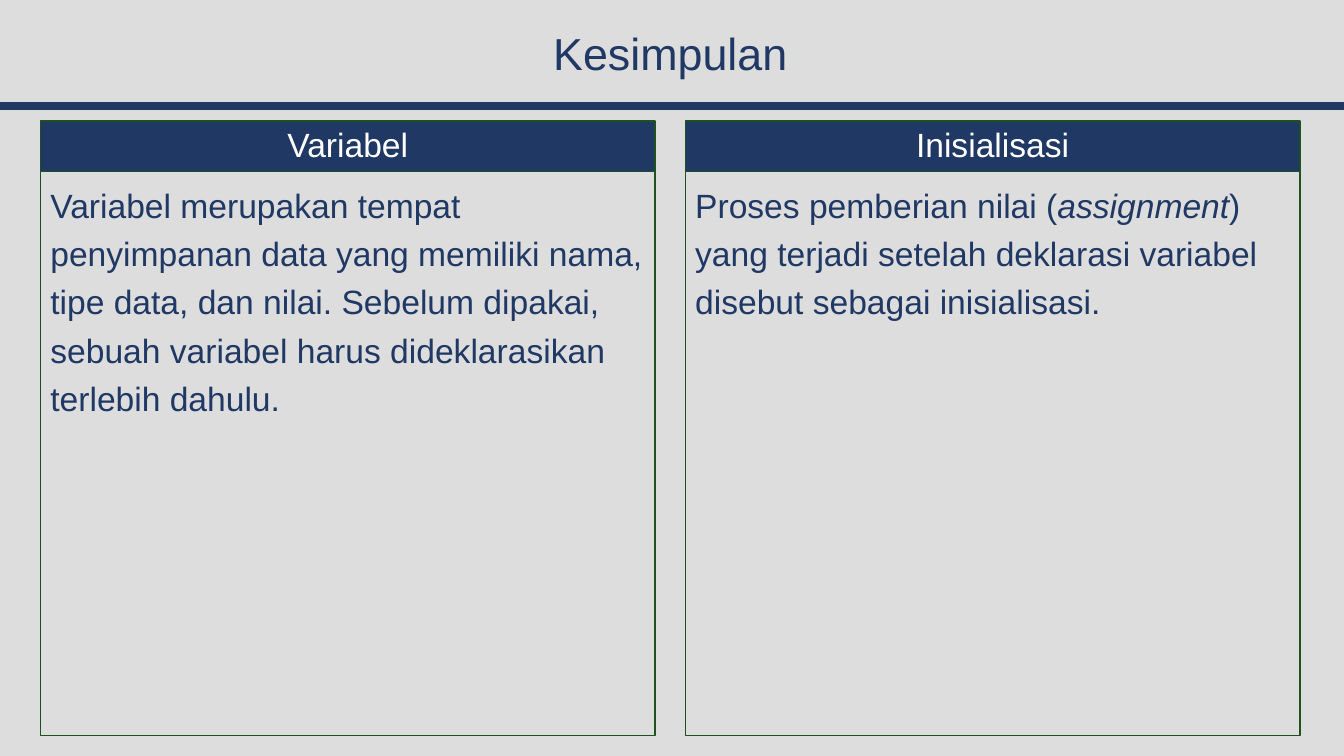
from dataclasses import dataclass

from lxml import etree
from pptx import Presentation
from pptx.dml.color import RGBColor
from pptx.enum import shapes, text
from pptx.oxml import ns
from pptx.util import Cm, Pt

HEADING = "Kesimpulan"

# Each panel: title, then body runs as (words, italic)
PANELS = [
    ("Variabel", [
        ("Variabel merupakan tempat penyimpanan data yang memiliki nama, tipe data, "
         "dan nilai. Sebelum dipakai, sebuah variabel harus dideklarasikan "
         "terlebih dahulu.", False),
    ]),
    ("Inisialisasi", [
        ("Proses pemberian nilai (", False),
        ("assignment", True),
        (") yang terjadi setelah deklarasi variabel disebut sebagai inisialisasi.", False),
    ]),
]


@dataclass(frozen=True)
class Theme:
    font: str = "Arial"
    navy: RGBColor = RGBColor(0x20, 0x38, 0x64)
    green: RGBColor = RGBColor(0x1E, 0x51, 0x1F)
    white: RGBColor = RGBColor(0xFF, 0xFF, 0xFF)
    grey: RGBColor = RGBColor(0xDD, 0xDD, 0xDD)
    heading_size: Pt = Pt(32)
    panel_size: Pt = Pt(24)
    rule_width: Pt = Pt(6)
    border_width: Pt = Pt(1)


THEME = Theme()
SLIDE_W, SLIDE_H = Cm(33.87), Cm(19.05)
MARGIN = Cm(1.02)
HEADING_TOP, HEADING_W, HEADING_H = Cm(0.51), Cm(31.75), Cm(1.78)
RULE_Y = Cm(2.67)
PANEL_TOP, PANEL_W, PANEL_GAP = Cm(3.05), Cm(15.49), Cm(0.76)
TITLE_H, BODY_H = Cm(1.27), Cm(14.22)


def write(shape, runs, size, color, align, anchor, spacing, before=Pt(0)):
    """Fill the shape with one paragraph of (words, italic) runs."""
    frame = shape.text_frame
    frame.word_wrap = True
    frame.vertical_anchor = anchor
    paragraph = frame.paragraphs[0]
    paragraph.alignment = align
    paragraph.line_spacing = spacing
    paragraph.space_before = before
    for words, italic in runs:
        run = paragraph.add_run()
        run.text = words
        run.font.name = THEME.font
        run.font.size = size
        run.font.italic = italic
        run.font.color.rgb = color


def add_box(slide, left, top, height, fill=None):
    """Add a bordered panel part, hollow unless a fill is given."""
    box = slide.shapes.add_shape(
        shapes.MSO_SHAPE.RECTANGLE, left, top, PANEL_W, height)
    box.shadow.inherit = False
    if fill is None:
        box.fill.background()
    else:
        box.fill.solid()
        box.fill.fore_color.rgb = fill
    box.line.color.rgb = THEME.green
    box.line.width = THEME.border_width
    return box


def add_rule(slide):
    rule = slide.shapes.add_connector(
        shapes.MSO_CONNECTOR.STRAIGHT, 0, RULE_Y, SLIDE_W, RULE_Y)
    rule.line.color.rgb = THEME.navy
    rule.line.width = THEME.rule_width
    etree.SubElement(rule._element.spPr, ns.qn("a:effectLst"))


def add_heading(slide):
    heading = slide.shapes.add_textbox(MARGIN, HEADING_TOP, HEADING_W, HEADING_H)
    write(heading, [(HEADING, False)], THEME.heading_size, THEME.navy,
          text.PP_ALIGN.CENTER, text.MSO_ANCHOR.MIDDLE, 0.9)


def add_panel(slide, left, title, body_runs):
    body = add_box(slide, left, PANEL_TOP + TITLE_H, BODY_H)
    write(body, body_runs, THEME.panel_size, THEME.navy,
          text.PP_ALIGN.LEFT, text.MSO_ANCHOR.TOP, 1.2)
    banner = add_box(slide, left, PANEL_TOP, TITLE_H, THEME.navy)
    write(banner, [(title, False)], THEME.panel_size, THEME.white,
          text.PP_ALIGN.CENTER, text.MSO_ANCHOR.MIDDLE, 0.9, Pt(10))


def main():
    deck = Presentation()
    deck.slide_width, deck.slide_height = SLIDE_W, SLIDE_H
    slide = deck.slides.add_slide(deck.slide_layouts[6])
    slide.background.fill.solid()
    slide.background.fill.fore_color.rgb = THEME.grey
    add_rule(slide)
    add_heading(slide)
    for column, (title, body_runs) in enumerate(PANELS):
        add_panel(slide, MARGIN + column * (PANEL_W + PANEL_GAP), title, body_runs)
    deck.save("out.pptx")


if __name__ == "__main__":
    main()
